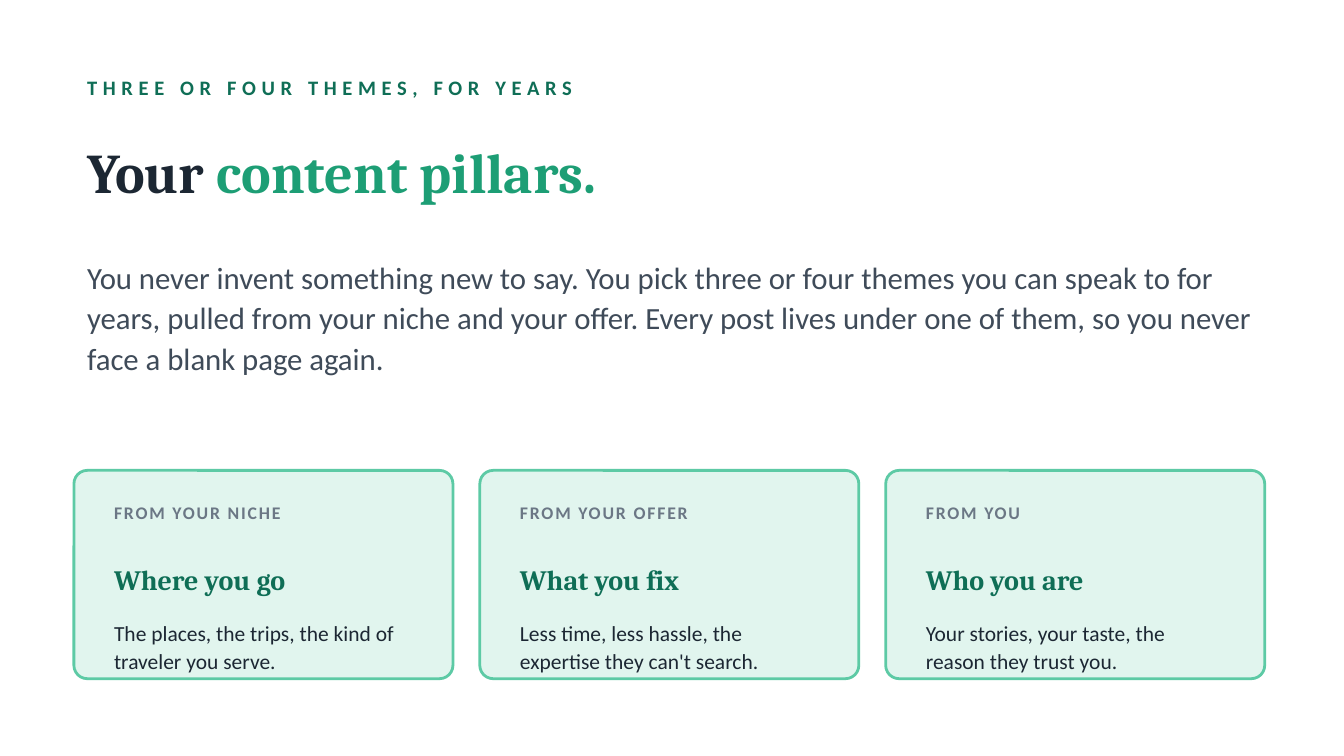
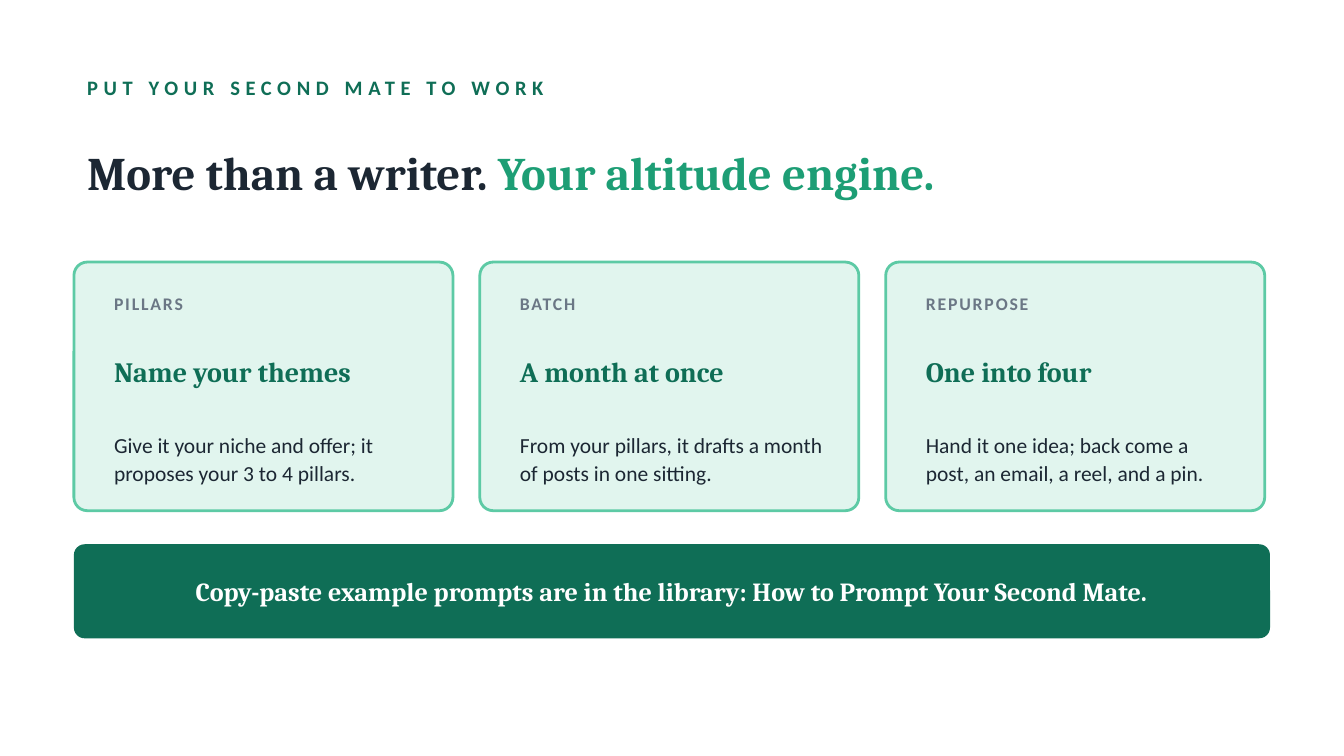
from pptx import Presentation
from pptx.dml.color import RGBColor
from pptx.enum.shapes import MSO_SHAPE as Shape
from pptx.enum.text import MSO_ANCHOR as Anchor, PP_ALIGN as Align
from pptx.util import Inches, Pt

# Colours
GREEN = RGBColor(0x0F, 0x6E, 0x56)
LEAF = RGBColor(0x1D, 0x9E, 0x75)
MINT = RGBColor(0xE1, 0xF5, 0xEE)
EDGE = RGBColor(0x5D, 0xCA, 0xA5)
INK = RGBColor(0x1C, 0x27, 0x33)
SLATE = RGBColor(0x3F, 0x4B, 0x59)
GREY = RGBColor(0x6B, 0x77, 0x85)
WHITE = RGBColor(0xFF, 0xFF, 0xFF)

SANS, SERIF = "Calibri", "Cambria"

# A 16:9 slide on a grid of 100 columns with square cells
WIDTH = Inches(10)
HEIGHT = WIDTH * 9 // 16
CELL = WIDTH / 100
LEFT, SPAN = 5.5, 89
CARD, GAP = 28.2, 2


def place(box):
    return [round(n * CELL) for n in box]


def add_text(slide, box, runs, size, font=SANS, bold=False, track=0,
             lead=None, align=Align.LEFT):
    """Add one paragraph; runs is a list of (words, colour)."""
    frame = slide.shapes.add_textbox(*place(box)).text_frame
    frame.word_wrap = True
    frame.vertical_anchor = Anchor.MIDDLE
    para = frame.paragraphs[0]
    para.alignment = align
    if lead:
        para.line_spacing = lead
    for words, color in runs:
        run = para.add_run()
        run.text = words
        run.font.name = font
        run.font.size = Pt(size)
        run.font.bold = bold
        run.font.color.rgb = color
        if track:
            run.font._element.set("spc", str(track * 100))


def add_panel(slide, box, fill, radius, edge=None):
    panel = slide.shapes.add_shape(Shape.ROUNDED_RECTANGLE, *place(box))
    panel.adjustments[0] = radius / box[3]
    panel.shadow.inherit = False
    panel.fill.solid()
    panel.fill.fore_color.rgb = fill
    if edge is None:
        panel.line.fill.background()
    else:
        panel.line.color.rgb = edge
        panel.line.width = Pt(1.5)


def add_head(slide, label, plain, accent, size):
    # Label above a two-colour title
    add_text(slide, (LEFT, 5, SPAN, 3), [(label, GREEN)], 11,
             bold=True, track=3)
    add_text(slide, (LEFT, 8.5, SPAN, 8.5), [(plain, INK), (accent, LEAF)],
             size, SERIF, bold=True)


def add_card(slide, box, label, title, body):
    x, y, w, h = box
    add_panel(slide, box, MINT, 1, EDGE)
    x, w = x + 2, w - 3.7
    add_text(slide, (x, y + 1.6, w, 3), [(label, GREY)], 9.5,
             bold=True, track=1)
    add_text(slide, (x, y + 4.6, w, 7), [(title, GREEN)], 15, SERIF, bold=True)
    add_text(slide, (x, y + 11.8, w, h - 13), [(body, INK)], 11.5, lead=1.08)


def add_cards(slide, top, height, cards):
    for i, card in enumerate(cards):
        add_card(slide, (LEFT + i * (CARD + GAP), top, CARD, height), *card)


def add_band(slide, box, words):
    x, y, w, h = box
    add_panel(slide, box, GREEN, 0.8)
    add_text(slide, (x + 2.5, y, w - 5, h), [(words, WHITE)], 14, SERIF,
             bold=True, align=Align.CENTER)


def add_slide(deck):
    slide = deck.slides.add_slide(deck.slide_layouts[6])
    slide.background.fill.solid()
    slide.background.fill.fore_color.rgb = WHITE
    return slide


def add_themes(deck):
    slide = add_slide(deck)
    add_head(slide, "THREE OR FOUR THEMES, FOR YEARS",
             "Your ", "content pillars.", 30)
    # Lead paragraph
    intro = ("You never invent something new to say. You pick three or four "
             "themes you can speak to for years, pulled from your niche and "
             "your offer. Every post lives under one of them, so you never "
             "face a blank page again.")
    add_text(slide, (LEFT, 19, SPAN, 9), [(intro, SLATE)], 16.5, lead=1.1)
    add_cards(slide, 35, 15.5, [
        ("FROM YOUR NICHE", "Where you go",
         "The places, the trips, the kind of traveler you serve."),
        ("FROM YOUR OFFER", "What you fix",
         "Less time, less hassle, the expertise they can't search."),
        ("FROM YOU", "Who you are",
         "Your stories, your taste, the reason they trust you."),
    ])


def add_engine(deck):
    slide = add_slide(deck)
    add_head(slide, "PUT YOUR SECOND MATE TO WORK",
             "More than a writer. ", "Your altitude engine.", 25)
    add_cards(slide, 19.5, 18.5, [
        ("PILLARS", "Name your themes",
         "Give it your niche and offer; it proposes your 3 to 4 pillars."),
        ("BATCH", "A month at once",
         "From your pillars, it drafts a month of posts in one sitting."),
        ("REPURPOSE", "One into four",
         "Hand it one idea; back come a post, an email, a reel, and a pin."),
    ])
    # Closing note
    add_band(slide, (LEFT, 40.5, SPAN, 7),
             "Copy-paste example prompts are in the library: "
             "How to Prompt Your Second Mate.")


def main():
    deck = Presentation()
    deck.slide_width, deck.slide_height = WIDTH, HEIGHT
    add_themes(deck)
    add_engine(deck)
    deck.save("out.pptx")


if __name__ == "__main__":
    main()
